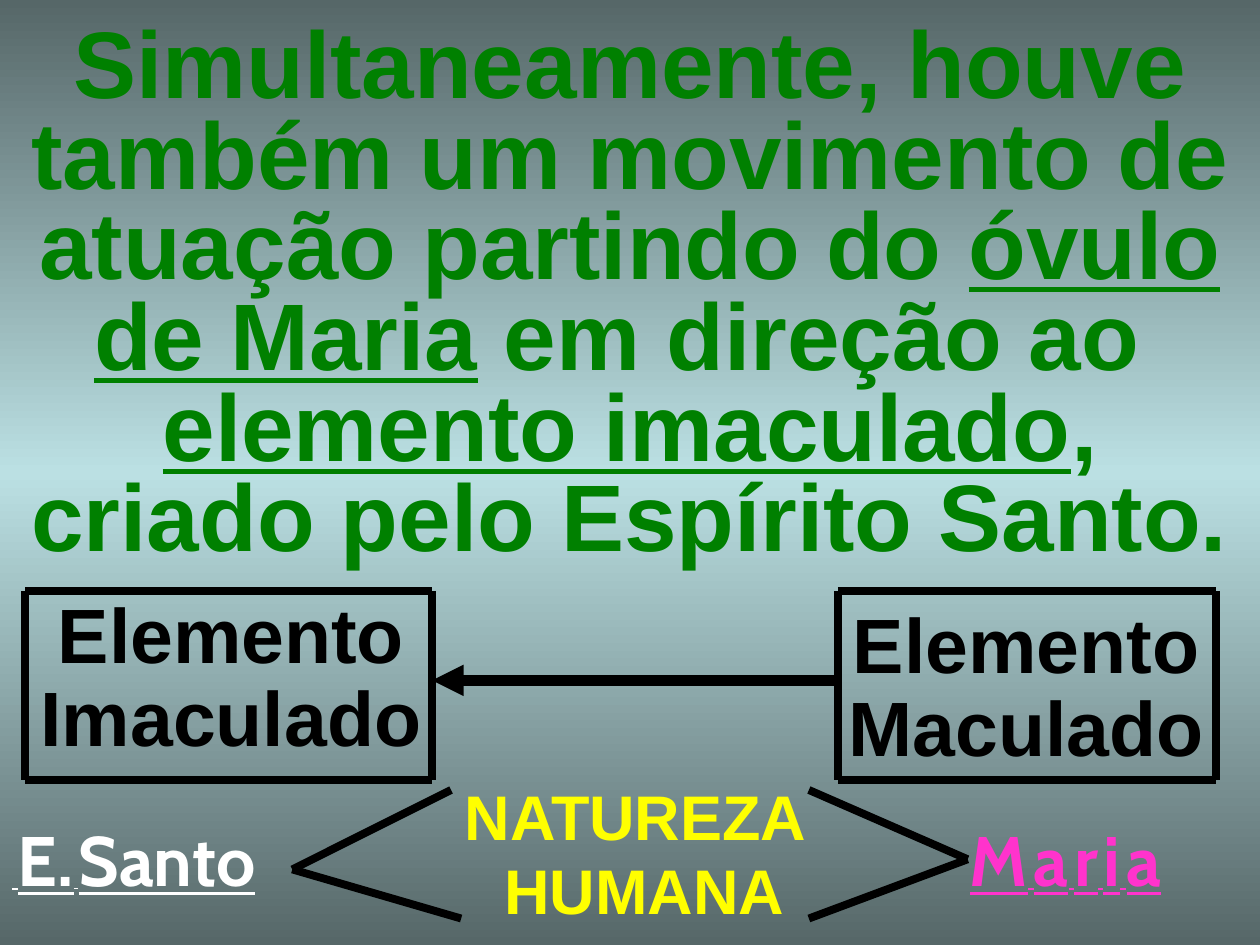
"""Build the slide on the movement from Maria's ovum towards the immaculate element."""
from lxml import etree
from pptx import Presentation
from pptx.dml.color import RGBColor
from pptx.enum.shapes import MSO_CONNECTOR
from pptx.enum.text import MSO_ANCHOR, PP_ALIGN
from pptx.oxml.ns import qn
from pptx.util import Inches, Pt

STRAIGHT = MSO_CONNECTOR.STRAIGHT
TOP, MIDDLE = MSO_ANCHOR.TOP, MSO_ANCHOR.MIDDLE
LEFT, CENTER = PP_ALIGN.LEFT, PP_ALIGN.CENTER
GREEN = RGBColor(0x00, 0x80, 0x00)
BLACK = RGBColor(0x00, 0x00, 0x00)
WHITE = RGBColor(0xFF, 0xFF, 0xFF)
PINK = RGBColor(0xFF, 0x33, 0xCC)
YELLOW = RGBColor(0xFF, 0xFF, 0x00)
DARK = RGBColor(0x56, 0x67, 0x68)
PALE = RGBColor(0xBB, 0xE0, 0xE3)

BACKGROUND = [(0, DARK), (50, PALE), (100, DARK)]
TITLE = [
    ("Simultaneamente, houve também um movimento de atuação partindo do ", 54, False),
    ("óvulo de Maria", 54, True),
    (" em direção ao ", 54, False),
    ("\n", 54, False),
    ("elemento imaculado", 54, True),
    (", criado pelo Espírito Santo.", 54, False),
]
SPIRIT = [(" ", 14, True), ("E.", 40, True), (" ", 12, True), ("Santo", 40, True)]
MARIA = [("M", 40, True), (" ", 14, True), ("a", 40, True), (" ", 14, True),
         ("r", 40, True), (" ", 14, True), ("i", 40, True), (" ", 16, True),
         ("a", 40, True)]


def plain(size, *lines):
    return [[(line, size, False)] for line in lines]


TEXTS = [
    ((0, 0.28, 10, 4.17), [TITLE], "Arial", GREEN, CENTER, 0.8, MIDDLE, 0),
    ((0.2, 4.69, 3.27, 1.42), plain(44, "Elemento", "Imaculado"),
     "Arial", BLACK, CENTER, 0.9, TOP, 0),
    ((6.57, 4.77, 3.15, 1.42), plain(44, "Elemento", "Maculado"),
     "Arial", BLACK, CENTER, 0.9, TOP, 0),
    ((0, 6.43, 2.71, 0.77), [SPIRIT], "Cabin", WHITE, LEFT, 1.0, TOP, 0),
    ((7.6, 6.43, 2.13, 0.77), [MARIA], "Cabin", PINK, LEFT, 1.0, TOP, 0),
    ((3.43, 6.19, 3.23, 1.23), plain(36, "NATUREZA", " HUMANA"),
     "Arial", YELLOW, CENTER, 0.9, TOP, 3.5),
]
FRAME_TOP, FRAME_BOTTOM = 4.69, 6.19
FRAMES = [(0.2, 3.43), (6.65, 9.65)]
ARROW = ((6.65, 5.4), (3.43, 5.4))
BRANCHES = [
    ((2.32, 6.9), [(3.58, 6.27), (3.66, 7.29)]),
    ((7.68, 6.82), [(6.42, 7.29), (6.42, 6.27)]),
]


def paint_background(s):
    fill = s.background.fill
    fill.gradient()
    fill.gradient_angle = 90
    stops = next(s.element.iter(qn("a:gsLst")))
    for stop in list(stops):
        stops.remove(stop)
    for pos, color in BACKGROUND:
        stop = etree.SubElement(stops, qn("a:gs"), pos=str(pos * 1000))
        etree.SubElement(stop, qn("a:srgbClr"), val=str(color))


def add_text(s, box, paragraphs, font, color, align, spacing, anchor, gap):
    tf = s.shapes.add_textbox(*map(Inches, box)).text_frame
    tf.word_wrap = True
    tf.vertical_anchor = anchor
    for i, runs in enumerate(paragraphs):
        p = tf.add_paragraph() if i else tf.paragraphs[0]
        p.alignment = align
        p.line_spacing = spacing
        p.space_before = Pt(gap if i else 0)
        for text, size, underline in runs:
            if text == "\n":
                p.add_line_break()
                continue
            r = p.add_run()
            r.text = text
            r.font.name = font
            r.font.size = Pt(size)
            r.font.bold = True
            r.font.underline = underline
            r.font.color.rgb = color


def add_line(s, start, end, width=4.5):
    line = s.shapes.add_connector(STRAIGHT, *map(Inches, start + end))
    line.line.color.rgb = BLACK
    line.line.width = Pt(width)
    etree.SubElement(line.element.spPr, qn("a:effectLst"))
    return line


def main():
    prs = Presentation()
    prs.slide_width, prs.slide_height = Inches(10), Inches(7.5)
    s = prs.slides.add_slide(prs.slide_layouts[6])
    paint_background(s)
    for item in TEXTS:
        add_text(s, *item)
    for left, right in FRAMES:
        for x in (left, right):
            add_line(s, (x, FRAME_TOP), (x, FRAME_BOTTOM))
        for y in (FRAME_TOP, FRAME_BOTTOM):
            add_line(s, (left, y), (right, y))
    arrow = add_line(s, *ARROW, width=6)
    etree.SubElement(arrow.line._get_or_add_ln(), qn("a:tailEnd"), type="triangle")
    for tip, ends in BRANCHES:
        for end in ends:
            add_line(s, tip, end)
    prs.save("out.pptx")


if __name__ == "__main__":
    main()
